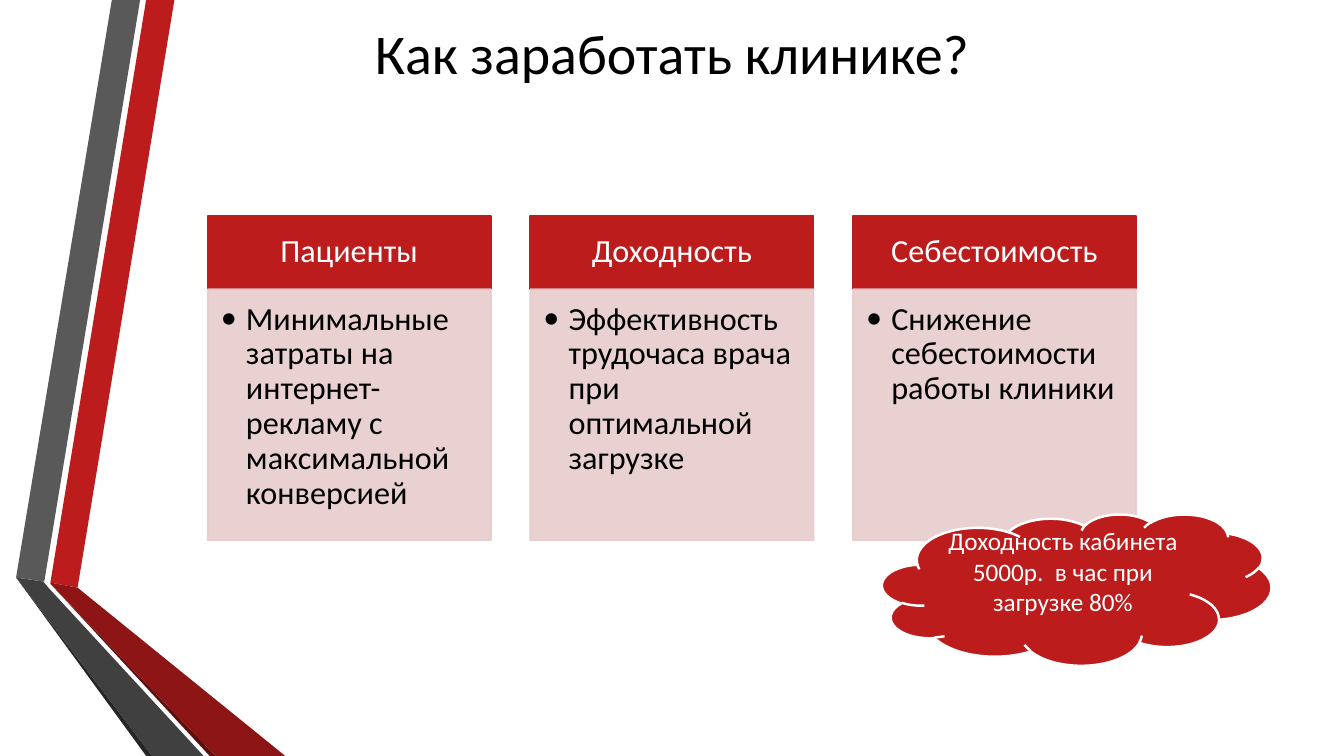
from lxml.etree import SubElement
from pptx import Presentation
from pptx.dml.color import RGBColor
from pptx.enum.shapes import MSO_SHAPE
from pptx.enum.text import MSO_ANCHOR, PP_ALIGN
from pptx.oxml.ns import qn
from pptx.util import Inches, Pt

RED, PINK, WHITE, BLACK = "BC1C1C", "E7CDCD", "FFFFFF", "000000"

RIBBONS = [
    (RED, [(0.5, 5.78), (0.77, 5.83), (1.73, 0), (1.45, 0)]),
    ("595959", [(1.39, 0), (1.11, 0), (0.16, 5.73), (0.44, 5.77)]),
    ("262626", [(0.16, 5.73), (1.45, 7.5), (1.51, 7.5)]),
    ("5E0E0E", [(0.5, 5.79), (2.08, 7.5), (2.14, 7.5)]),
    ("8D1515", [(0.5, 5.79), (2.14, 7.5), (2.83, 7.5), (0.77, 5.83), (0.5, 5.78)]),
    ("404040", [(2.02, 7.5), (0.48, 5.83), (0.43, 5.77), (0.16, 5.73), (1.51, 7.5)]),
]

CARDS = [
    ("Пациенты", "Минимальные затраты на интернет- рекламу с максимальной конверсией"),
    ("Доходность", "Эффективность трудочаса врача при оптимальной загрузке"),
    ("Себестоимость", "Снижение себестоимости работы клиники"),
]


def rgb(color):
    return RGBColor.from_string(color)


def paint(sp, fill, line=None, width=1.25, opacity=100):
    sp.shadow.inherit = False
    sp.fill.solid()
    sp.fill.fore_color.rgb = rgb(fill)
    if line:
        sp.line.color.rgb = rgb(line)
        sp.line.width = Pt(width)
    else:
        sp.line.fill.background()
    if opacity < 100:
        for clr in sp._element.spPr.iter(qn("a:srgbClr")):
            SubElement(clr, qn("a:alpha")).set("val", str(opacity * 1000))


def write(sp, text, size, color=WHITE, align=PP_ALIGN.CENTER, anchor=MSO_ANCHOR.MIDDLE,
          insets=(0.1, 0.05, 0.1, 0.05), spacing=None, bullet=False):
    tf = sp.text_frame
    tf.word_wrap = True
    tf.vertical_anchor = anchor
    tf.margin_left, tf.margin_top, tf.margin_right, tf.margin_bottom = map(Inches, insets)
    p = tf.paragraphs[0]
    p.alignment = align
    p.line_spacing = spacing
    if bullet:
        pPr = p._p.get_or_add_pPr()
        pPr.set("marL", str(Inches(0.25)))
        pPr.set("indent", str(-Inches(0.25)))
        SubElement(pPr, qn("a:buFont")).set("typeface", "Calibri")
        SubElement(pPr, qn("a:buChar")).set("char", "•")
    r = p.add_run()
    r.text = text
    r.font.name = "Calibri"
    r.font.size = Pt(size)
    r.font.color.rgb = rgb(color)


def add_ribbons(s, x, y):
    for color, points in RIBBONS:
        start, *rest = [(Inches(x + px), Inches(y + py)) for px, py in points]
        builder = s.shapes.build_freeform(*start)
        builder.add_line_segments(rest)
        paint(builder.convert_to_shape(), color)


def add_title(s, x, y, w, h):
    sp = s.shapes.add_textbox(Inches(x), Inches(y), Inches(w), Inches(h))
    write(sp, "Как заработать клинике?", 40, color=BLACK)


def add_card(s, x, y, w, h, heading, body):
    head_h = 0.73
    # Heading bar
    sp = s.shapes.add_shape(MSO_SHAPE.RECTANGLE, Inches(x), Inches(y), Inches(w), Inches(head_h))
    paint(sp, RED, RED)
    write(sp, heading, 23, insets=(0.18, 0.1, 0.18, 0.1), spacing=0.9)
    # Body panel
    sp = s.shapes.add_shape(MSO_SHAPE.RECTANGLE, Inches(x), Inches(y + head_h),
                            Inches(w), Inches(h - head_h))
    paint(sp, PINK, PINK, opacity=90)
    write(sp, body, 23, color=BLACK, align=PP_ALIGN.LEFT, anchor=MSO_ANCHOR.TOP,
          insets=(0.13, 0.13, 0.18, 0.2), spacing=0.9, bullet=True)


def add_cards(s, x, y, w, h, gap=0.39):
    card_w = (w - gap * (len(CARDS) - 1)) / len(CARDS)
    for i, (heading, body) in enumerate(CARDS):
        add_card(s, x + i * (card_w + gap), y, card_w, h, heading, body)


def add_cloud(s, x, y, w, h):
    sp = s.shapes.add_shape(MSO_SHAPE.CLOUD, Inches(x), Inches(y), Inches(w), Inches(h))
    paint(sp, RED, WHITE, width=1.75)
    # The deep bottom inset lifts the text
    write(sp, "Доходность кабинета 5000р.  в час при загрузке 80%", 18,
          insets=(0.1, 0.05, 0.1, 0.35))


def main():
    prs = Presentation()
    prs.slide_width, prs.slide_height = Inches(13.33), Inches(7.5)
    s = prs.slides.add_slide(prs.slide_layouts[6])
    add_ribbons(s, 0, 0)
    add_cards(s, 2.06, 2.14, 9.21, 3.22)
    add_title(s, 2.78, 0, 7.77, 1.04)
    add_cloud(s, 8.75, 5.1, 3.86, 1.5)
    prs.save("out.pptx")


if __name__ == "__main__":
    main()
